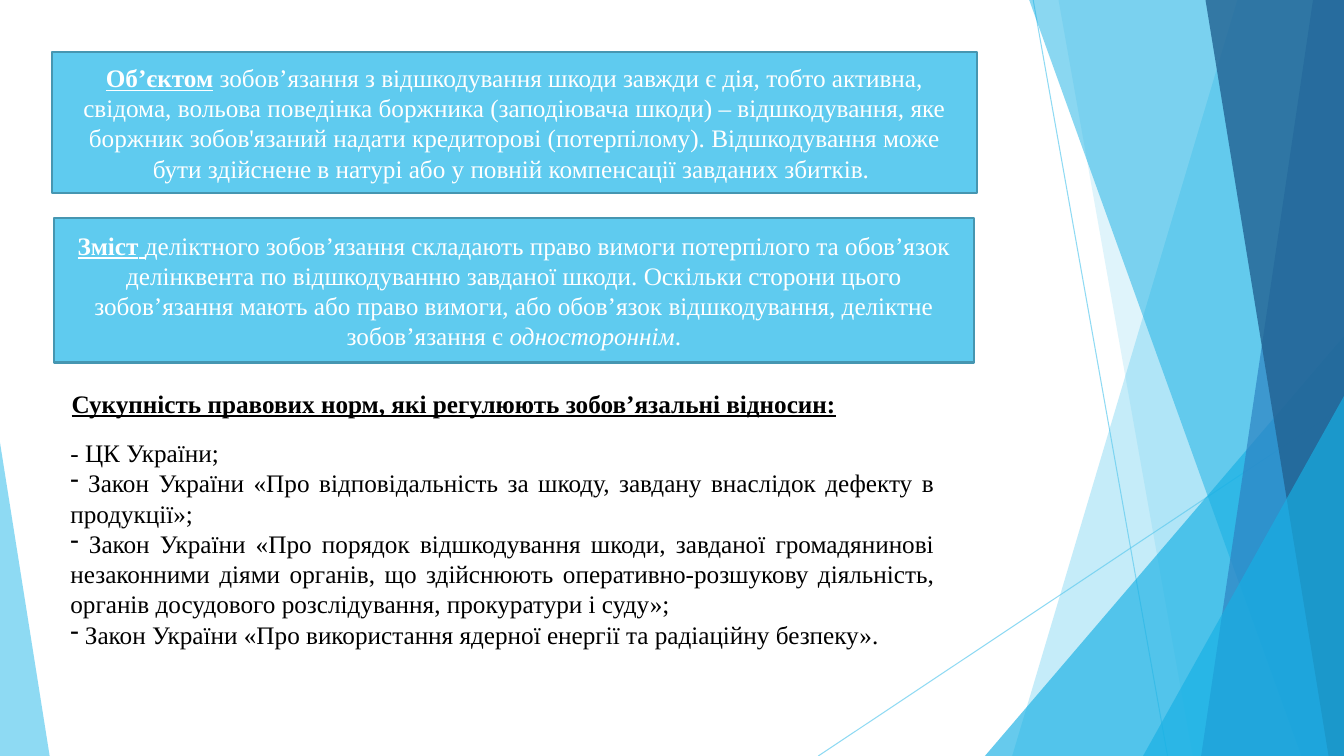
from dataclasses import dataclass

from lxml import etree
from pptx import Presentation
from pptx import util as u
from pptx.dml.color import RGBColor
from pptx.enum import shapes, text
from pptx.oxml.ns import qn


@dataclass(frozen=True)
class Theme:
    """Colours, font and type size of the slide."""
    sky: str = "5FCBEF"
    cyan: str = "17B0E4"
    blue: str = "2E83C3"
    navy: str = "226292"
    edge: str = "4696B1"
    white: str = "FFFFFF"
    black: str = "000000"
    font: str = "Times New Roman"
    size: int = 18


def run(p, content, theme, color, bold=False, italic=False, underline=False):
    """Add one formatted run to a paragraph."""
    r = p.add_run()
    r.text = content
    font = r.font
    font.name, font.size = theme.font, u.Pt(theme.size)
    font.bold, font.italic, font.underline = bold, italic, underline
    font.color.rgb = RGBColor.from_string(color)


def paint(fill, color, alpha=100):
    """Give a fill a solid colour with an opacity in percent."""
    fill.solid()
    fill.fore_color.rgb = RGBColor.from_string(color)
    if alpha < 100:
        clr = fill._xPr.find(qn("a:solidFill"))[0]
        etree.SubElement(clr, qn("a:alpha")).set("val", str(alpha * 1000))


class Canvas:
    """Draws elements on one slide in one theme, with lengths in points."""

    def __init__(self, slide, theme):
        """Keep the slide and its theme."""
        self.shapes, self.theme = slide.shapes, theme

    def line(self, x1, y1, x2, y2):
        """Draw a thin translucent line."""
        ends = [u.Pt(v) for v in (x1, y1, x2, y2)]
        cx = self.shapes.add_connector(shapes.MSO_CONNECTOR.STRAIGHT, *ends)
        cx.line.width = u.Pt(0.75)
        paint(cx.line.fill, self.theme.sky, 70)
        etree.SubElement(cx._element.spPr, qn("a:effectLst"))

    def facet(self, xs, color, alpha):
        """Draw a full-height facet from its top and bottom x values."""
        pts = [(u.Pt(x), u.Pt(y)) for x, y in zip(xs, (-0.5, -0.5, 540, 540))]
        fb = self.shapes.build_freeform(*pts[0])
        fb.add_line_segments(pts[1:])
        self.finish(fb.convert_to_shape(), color, alpha)

    def triangle(self, box, apex, color, alpha):
        """Draw a right triangle with its apex at 0 (left) or 1 (right)."""
        sp = self.shapes.add_shape(shapes.MSO_SHAPE.ISOSCELES_TRIANGLE, *map(u.Pt, box))
        sp.adjustments[0] = apex
        self.finish(sp, color, alpha)

    def finish(self, sp, color, alpha):
        """Fill a shape and remove its outline and shadow."""
        sp.shadow.inherit = False
        paint(sp.fill, color, alpha)
        sp.line.fill.background()

    def panel(self, box, runs):
        """Draw a filled box with centred white text."""
        sp = self.shapes.add_shape(shapes.MSO_SHAPE.RECTANGLE, *map(u.Pt, box))
        sp.shadow.inherit = False
        paint(sp.fill, self.theme.sky)
        paint(sp.line.fill, self.theme.edge)
        sp.line.width = u.Pt(1.5)
        tf = sp.text_frame
        tf.word_wrap, tf.vertical_anchor = True, text.MSO_ANCHOR.MIDDLE
        p = tf.paragraphs[0]
        p.alignment = text.PP_ALIGN.CENTER
        for content, style in runs:
            run(p, content, self.theme, self.theme.white, **style)

    def textbox(self, box, lines, align, **style):
        """Write black paragraphs; a dash bullet precedes all but the first."""
        tf = self.shapes.add_textbox(*map(u.Pt, box)).text_frame
        tf.word_wrap = True
        for i, content in enumerate(lines):
            p = tf.add_paragraph() if i else tf.paragraphs[0]
            p.alignment = align
            if i:
                pPr = p._p.get_or_add_pPr()
                etree.SubElement(pPr, qn("a:buFontTx"))
                etree.SubElement(pPr, qn("a:buChar")).set("char", "-")
            run(p, content, self.theme, self.theme.black, **style)


def main():
    """Build the slide and save it."""
    prs = Presentation()
    prs.slide_width, prs.slide_height = u.Pt(960), u.Pt(540)
    t = Theme()
    s = Canvas(prs.slides.add_slide(prs.slide_layouts[6]), t)

    s.line(738, 0, 834, 540)
    s.line(960, 290, 584.5, 540)
    s.facet((884, 960, 960, 723), t.sky, 36)
    s.facet((756, 960, 960, 852), t.sky, 20)
    s.triangle((703.5, 240, 256.5, 300), 1, t.cyan, 66)
    s.facet((735, 960, 960, 929.5), t.cyan, 50)
    s.facet((938, 960, 960, 858), t.blue, 70)
    s.facet((861, 960, 960, 949), t.navy, 80)
    s.triangle((816.5, 283, 143.5, 257), 1, t.cyan, 66)
    s.triangle((0, 316, 35.5, 224), 0, t.sky, 70)

    key = {"bold": True, "underline": True}
    s.panel((37.2, 37.2, 660.5, 101), [
        ("Об’єктом", key),
        (" зобов’язання з відшкодування шкоди завжди є дія, тобто активна, свідома, "
         "вольова поведінка боржника (заподіювача шкоди) – відшкодування, яке боржник "
         "зобов'язаний надати кредиторові (потерпілому). Відшкодування може бути "
         "здійснене в натурі або у повній компенсації завданих збитків. ", {})])
    s.panel((38.6, 156, 657, 103), [
        ("Зміст", key),
        (" ", {"underline": True}),
        ("деліктного зобов’язання складають право вимоги потерпілого та обов’язок "
         "делінквента по відшкодуванню завданої шкоди. Оскільки сторони цього "
         "зобов’язання мають або право вимоги, або обов’язок відшкодування, деліктне "
         "зобов’язання є ", {}),
        ("одностороннім", {"italic": True}),
        (".", {})])
    s.textbox((44, 273.6, 691, 29), [
        "Сукупність правових норм, які регулюють зобов’язальні відносин:",
    ], text.PP_ALIGN.LEFT, **key)
    s.textbox((43.2, 309, 631.5, 160), [
        "- ЦК України;",
        " Закон України «Про відповідальність за шкоду, завдану внаслідок дефекту в "
        "продукції»;",
        " Закон України «Про порядок відшкодування шкоди, завданої громадянинові "
        "незаконними діями органів, що здійснюють оперативно-розшукову діяльність, "
        "органів досудового розслідування, прокуратури і суду»;",
        " Закон України «Про використання ядерної енергії та радіаційну безпеку».",
    ], text.PP_ALIGN.JUSTIFY)
    prs.save("out.pptx")


if __name__ == "__main__":
    main()
